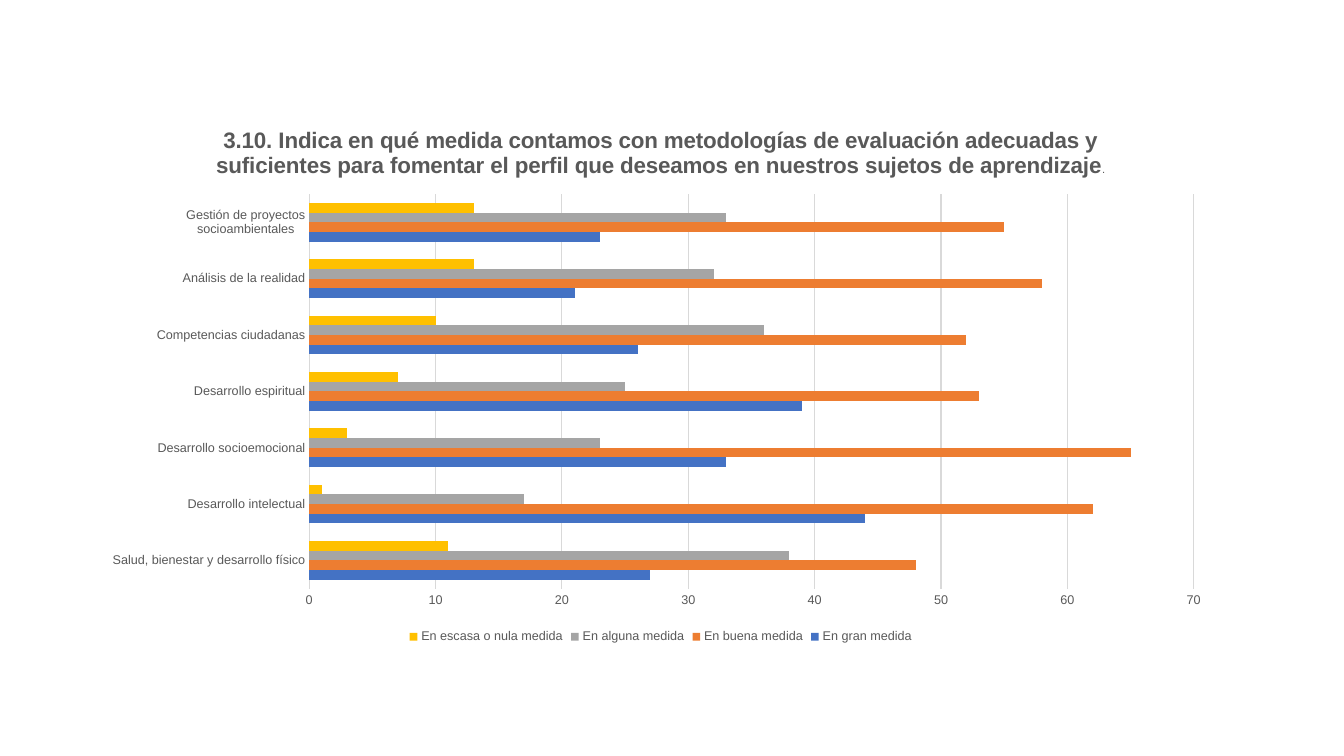
from lxml.etree import SubElement
from pptx import Presentation
from pptx.chart.data import CategoryChartData
from pptx.dml.color import RGBColor
from pptx.enum.chart import XL_CHART_TYPE as ChartType
from pptx.enum.chart import XL_LEGEND_POSITION as LegendPosition
from pptx.enum.chart import XL_TICK_MARK as TickMark
from pptx.oxml.ns import qn
from pptx.util import Pt

TITLE = ("3.10. Indica en qué medida contamos con metodologías de evaluación adecuadas y "
         "suficientes para fomentar el perfil que deseamos en nuestros sujetos de aprendizaje")
CATEGORIES = [
    "Salud, bienestar y desarrollo físico",
    "Desarrollo intelectual",
    "Desarrollo socioemocional",
    "Desarrollo espiritual",
    "Competencias ciudadanas",
    "Análisis de la realidad",
    "Gestión de proyectos socioambientales",
]
SERIES = [
    ("En gran medida", "4472C4", [27, 44, 33, 39, 26, 21, 23]),
    ("En buena medida", "ED7D31", [48, 62, 65, 53, 52, 58, 55]),
    ("En alguna medida", "A5A5A5", [38, 17, 23, 25, 36, 32, 33]),
    ("En escasa o nula medida", "FFC000", [11, 1, 3, 7, 10, 13, 13]),
]


def rgb(value):
    return RGBColor.from_string(value)


class SurveySlide:
    font_name = "Arial"
    text_color = "595959"
    rule_color = "D9D9D9"

    def __init__(self, page):
        self.page = page

    def style_font(self, font, size, bold=False):
        font.name = self.font_name
        font.size = Pt(size)
        font.bold = bold
        font.color.rgb = rgb(self.text_color)

    def style_rule(self, line):
        line.color.rgb = rgb(self.rule_color)
        line.width = Pt(0.75)

    def add_bars(self, left, top, width, height):
        data = CategoryChartData()
        data.categories = CATEGORIES
        for name, _, values in SERIES:
            data.add_series(name, values)
        frame = self.page.shapes.add_chart(
            ChartType.BAR_CLUSTERED, Pt(left), Pt(top), Pt(width), Pt(height), data)
        chart = frame.chart
        self.style_font(chart.font, 9)
        plot = chart.plots[0]
        plot.gap_width = 182
        plot.overlap = 0
        plot.vary_by_categories = False
        for series, (_, color, _) in zip(plot.series, SERIES):
            series.format.fill.solid()
            series.format.fill.fore_color.rgb = rgb(color)
        return chart

    def style_axes(self, chart):
        for axis in (chart.category_axis, chart.value_axis):
            axis.major_tick_mark = axis.minor_tick_mark = TickMark.NONE
            self.style_font(axis.tick_labels.font, 9)
        self.style_rule(chart.category_axis.format.line)
        values = chart.value_axis
        values.minimum_scale, values.maximum_scale, values.major_unit = 0, 70, 10
        values.format.line.fill.background()
        values.has_major_gridlines = True
        self.style_rule(values.major_gridlines.format.line)

    def add_title(self, chart, text):
        """Set the chart title and end it with a small full stop."""
        chart.has_title = True
        para = chart.chart_title.text_frame.paragraphs[0]
        for words, size, bold in ((text, 16, True), (".", 8, False)):
            span = para.add_run()
            span.text = words
            self.style_font(span.font, size, bold)

    def add_legend(self, chart):
        chart.has_legend = True
        chart.legend.position = LegendPosition.BOTTOM
        chart.legend.include_in_layout = False
        self.style_font(chart.legend.font, 9)

    def place_plot(self, chart, **fractions):
        """Fix the inner plot area as fractions of the chart frame."""
        area = chart.element.find(".//" + qn("c:plotArea"))
        for layout in area.findall(qn("c:layout")):
            area.remove(layout)
        layout = SubElement(area, qn("c:layout"))
        area.insert(0, layout)
        manual = SubElement(layout, qn("c:manualLayout"))
        settings = {"layoutTarget": "inner", "xMode": "edge", "yMode": "edge", **fractions}
        for name, value in settings.items():
            SubElement(manual, qn("c:" + name)).set("val", str(value))


def main():
    deck = Presentation()
    deck.slide_width, deck.slide_height = Pt(960), Pt(540)
    slide = SurveySlide(deck.slides.add_slide(deck.slide_layouts[6]))
    chart = slide.add_bars(67, 77, 810, 386)
    slide.style_axes(chart)
    slide.add_title(chart, TITLE)
    slide.add_legend(chart)
    slide.place_plot(chart, x=0.19, y=0.16, w=0.78, h=0.73)
    deck.save("out.pptx")


if __name__ == "__main__":
    main()
